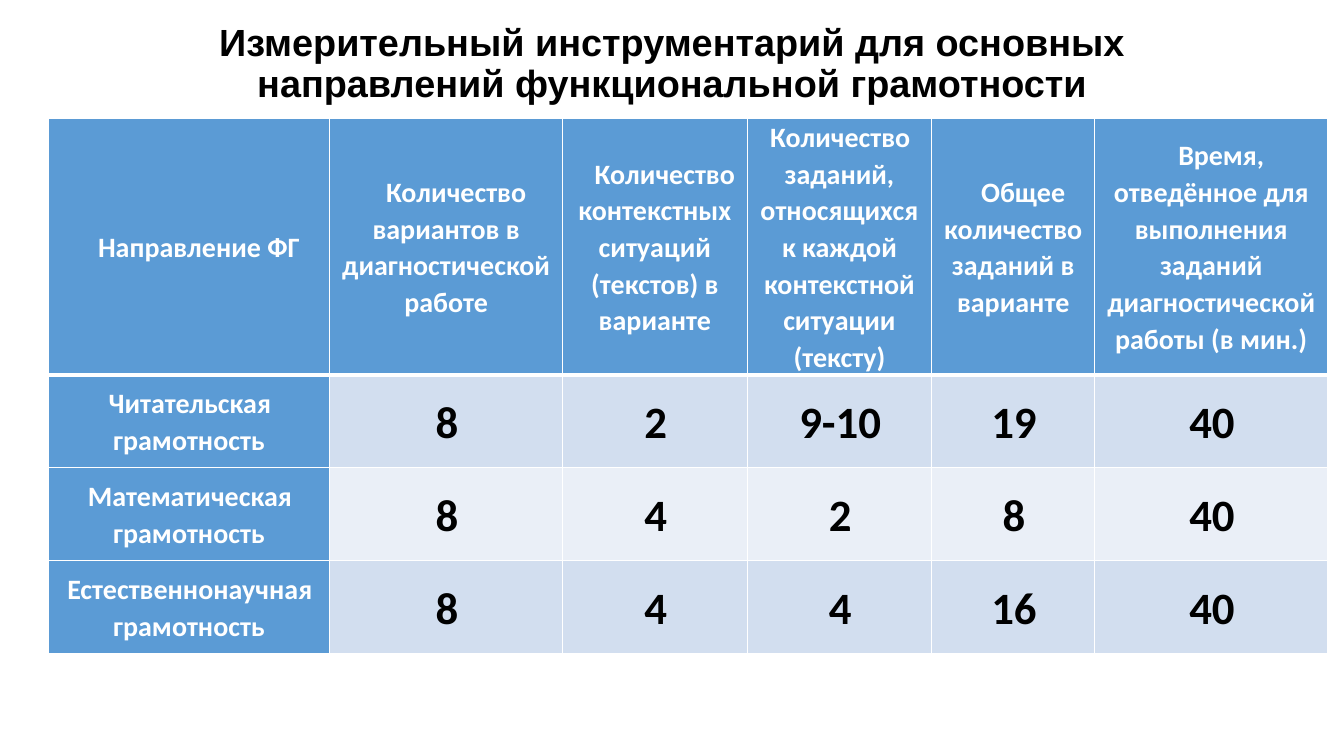
from dataclasses import dataclass

from lxml.etree import SubElement
from pptx import Presentation
from pptx.dml.color import RGBColor as RGB
from pptx.enum.text import MSO_ANCHOR as ANCHOR, PP_ALIGN as ALIGN
from pptx.oxml.ns import qn
from pptx.util import Cm, Pt


@dataclass(frozen=True)
class Theme:
    title_font: str = "Arial"
    table_font: str = "Calibri"
    title_size: float = 27
    label_size: float = 20
    value_size: float = 32
    black: str = "000000"
    white: str = "FFFFFF"
    blue: str = "5B9BD5"
    bands: tuple = ("D2DEEF", "EAEFF7")


THEME = Theme()

TITLE = "Измерительный инструментарий для основных направлений функциональной грамотности"
HEADERS = [
    "Направление ФГ",
    "Количество вариантов в диагностической работе",
    "Количество контекстных ситуаций (текстов) в варианте",
    "Количество заданий, относящихся к каждой контекстной ситуации (тексту)",
    "Общее количество заданий в варианте",
    "Время, отведённое для выполнения заданий диагностической работы (в мин.)",
]
ROWS = [
    ["Читательская грамотность", "8", "2", "9-10", "19", "40"],
    ["Математическая грамотность", "8", "4", "2", "8", "40"],
    ["Естественнонаучная грамотность", "8", "4", "4", "16", "40"],
]
COL_WIDTHS = [7.09, 5.87, 4.65, 4.65, 4.11, 5.87]
HEADER_HEIGHT, ROW_HEIGHT = 5.38, 2.34
HEADER_INDENT, BODY_INDENT = 0.5, 0.04
NARROW_COL = 3  # this header has no room for a first-line indent


def style_paragraph(p, font, size, color, spacing):
    p.alignment = ALIGN.CENTER
    p.line_spacing = spacing
    p.font.name, p.font.size, p.font.bold = font, Pt(size), True
    p.font.color.rgb = RGB.from_string(color)


def set_borders(cell, bottom):
    """White lines on all sides; must precede the fill in tcPr."""
    tc_pr = cell._tc.get_or_add_tcPr()
    for i, (side, width) in enumerate(zip("LRTB", (1, 1, 1, bottom))):
        ln = SubElement(tc_pr, qn(f"a:ln{side}"), w=str(Pt(width)))
        fill = SubElement(ln, qn("a:solidFill"))
        SubElement(fill, qn("a:srgbClr"), val=THEME.white)
        tc_pr.insert(i, ln)


def fill_cell(cell, text, fill, size, color, indent, bottom=1):
    cell.fill.solid()
    cell.fill.fore_color.rgb = RGB.from_string(fill)
    set_borders(cell, bottom)
    cell.vertical_anchor = ANCHOR.MIDDLE
    cell.margin_left = cell.margin_right = Cm(0.18)
    cell.margin_top = cell.margin_bottom = 0
    cell.text = text
    p = cell.text_frame.paragraphs[0]
    style_paragraph(p, THEME.table_font, size, color, 1.07)
    p._p.get_or_add_pPr().set("indent", str(Cm(indent)))


def add_title(s, x, y, w, h):
    title = s.shapes.title
    title.left, title.top, title.width, title.height = Cm(x), Cm(y), Cm(w), Cm(h)
    tf = title.text_frame
    tf.text = TITLE
    tf.word_wrap = True
    tf.vertical_anchor = ANCHOR.TOP
    style_paragraph(tf.paragraphs[0], THEME.title_font, THEME.title_size, THEME.black, 0.9)


def add_literacy_table(s, x, y):
    height = HEADER_HEIGHT + ROW_HEIGHT * len(ROWS)
    table = s.shapes.add_table(len(ROWS) + 1, len(HEADERS), Cm(x), Cm(y),
                               Cm(sum(COL_WIDTHS)), Cm(height)).table
    for col, width in zip(table.columns, COL_WIDTHS):
        col.width = Cm(width)
    for i, row in enumerate(table.rows):
        row.height = Cm(ROW_HEIGHT if i else HEADER_HEIGHT)

    # Header row
    for c, text in enumerate(HEADERS):
        indent = BODY_INDENT if c == NARROW_COL else HEADER_INDENT
        fill_cell(table.cell(0, c), text, THEME.blue, THEME.label_size,
                  THEME.white, indent, bottom=3)

    # Label column and banded values
    for r, (label, *values) in enumerate(ROWS, 1):
        fill_cell(table.cell(r, 0), label, THEME.blue, THEME.label_size,
                  THEME.white, BODY_INDENT)
        band = THEME.bands[(r - 1) % 2]
        for c, value in enumerate(values, 1):
            fill_cell(table.cell(r, c), value, band, THEME.value_size,
                      THEME.black, BODY_INDENT)


def main():
    prs = Presentation()
    prs.slide_width, prs.slide_height = Cm(33.87), Cm(19.05)
    s = prs.slides.add_slide(prs.slide_layouts[5])
    add_title(s, 2.33, 0.48, 29.21, 4.17)
    add_literacy_table(s, 1.22, 2.98)
    prs.save("out.pptx")


if __name__ == "__main__":
    main()
